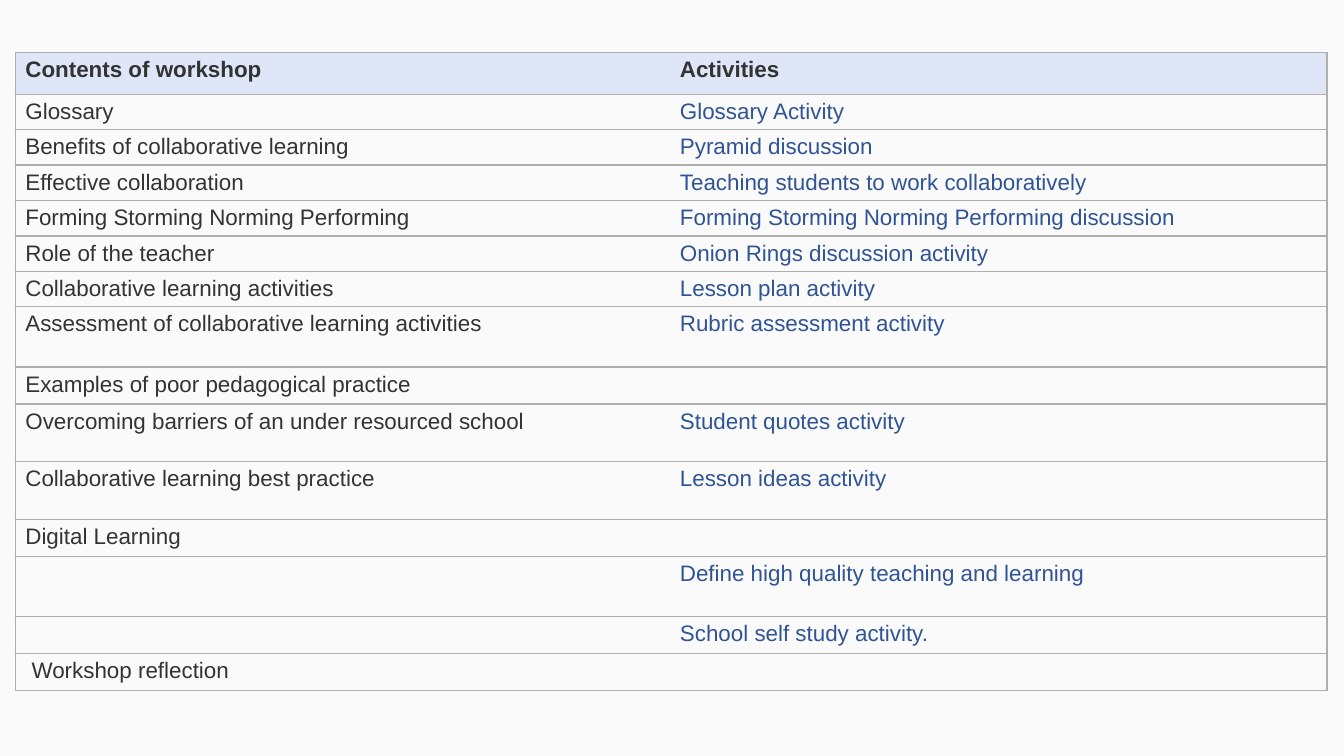
from lxml.etree import SubElement
from pptx import Presentation
from pptx.dml.color import RGBColor
from pptx.oxml.ns import qn
from pptx.util import Cm, Pt

COLORS = {
    "background": "FAFAFA",
    "header": "DEE6F7",
    "border": "B0AEAF",
    "content": "333333",
    "activity": "2F5496",
}
FONT, SIZE = "Arial", 12

# Row heights in centimetres
HEADER, SINGLE, TALL, TALLEST = 0.79, 0.67, 1.09, 1.14

# Workshop content, activity, row height
ROWS = [
    ("Contents of workshop", "Activities", HEADER),
    ("Glossary", "Glossary Activity", SINGLE),
    ("Benefits of collaborative learning", "Pyramid discussion", SINGLE),
    ("Effective collaboration", "Teaching students to work collaboratively", SINGLE),
    ("Forming Storming Norming Performing",
     "Forming Storming Norming Performing discussion", SINGLE),
    ("Role of the teacher", "Onion Rings discussion activity", SINGLE),
    ("Collaborative learning activities", "Lesson plan activity", SINGLE),
    ("Assessment of collaborative learning activities",
     "Rubric assessment activity", TALLEST),
    ("Examples of poor pedagogical practice", "", SINGLE),
    ("Overcoming barriers of an under resourced school",
     "Student quotes activity", TALL),
    ("Collaborative learning best practice", "Lesson ideas activity", TALL),
    ("Digital Learning", "", SINGLE),
    ("", "Define high quality teaching and learning", TALLEST),
    ("", "School self study activity.", SINGLE),
    (" Workshop reflection", "", SINGLE),
]
COLUMN_WIDTHS = (12.37, 12.42)
TABLE_LEFT, TABLE_TOP = 0.29, 0.99


def write_text(cell, text, color="content", bold=False):
    cell.margin_left = cell.margin_right = Cm(0.19)
    cell.margin_top = cell.margin_bottom = Cm(0.09)
    paragraph = cell.text_frame.paragraphs[0]
    if not text:
        # An empty cell still needs the text size, or its row grows
        SubElement(paragraph._p, qn("a:endParaRPr"), sz=str(SIZE * 100))
        return
    run = paragraph.add_run()
    run.text = text
    run.font.name, run.font.size, run.font.bold = FONT, Pt(SIZE), bold
    run.font.color.rgb = RGBColor.from_string(COLORS[color])


def draw_borders(cell, visible):
    properties = cell._tc.get_or_add_tcPr()
    for side in "LRTB":
        line = SubElement(properties, qn(f"a:ln{side}"), w=str(Pt(0.75)))
        if side in visible:
            fill = SubElement(line, qn("a:solidFill"))
            SubElement(fill, qn("a:srgbClr"), val=COLORS["border"])
        else:
            SubElement(line, qn("a:noFill"))


# Slide and background
presentation = Presentation()
presentation.slide_width, presentation.slide_height = Cm(25.4), Cm(14.29)
slide = presentation.slides.add_slide(presentation.slide_layouts[6])
background = slide.background.fill
background.solid()
background.fore_color.rgb = RGBColor.from_string(COLORS["background"])

# Table grid
table = slide.shapes.add_table(
    len(ROWS), len(COLUMN_WIDTHS), Cm(TABLE_LEFT), Cm(TABLE_TOP),
    Cm(sum(COLUMN_WIDTHS)), Cm(sum(height for *_, height in ROWS)),
).table
table.horz_banding = False
for column, width in zip(table.columns, COLUMN_WIDTHS):
    column.width = Cm(width)

# Cells: outer frame and row rules, no line between the columns
for row_index, (content, activity, height) in enumerate(ROWS):
    table.rows[row_index].height = Cm(height)
    is_header = row_index == 0
    for column_index, text in enumerate((content, activity)):
        cell = table.cell(row_index, column_index)
        is_activity = column_index == 1 and not is_header
        write_text(cell, text, color="activity" if is_activity else "content",
                   bold=is_header)
        draw_borders(cell, "TB" + "LR"[column_index])
        if is_header:
            cell.fill.solid()
            cell.fill.fore_color.rgb = RGBColor.from_string(COLORS["header"])
        else:
            cell.fill.background()

presentation.save("out.pptx")
